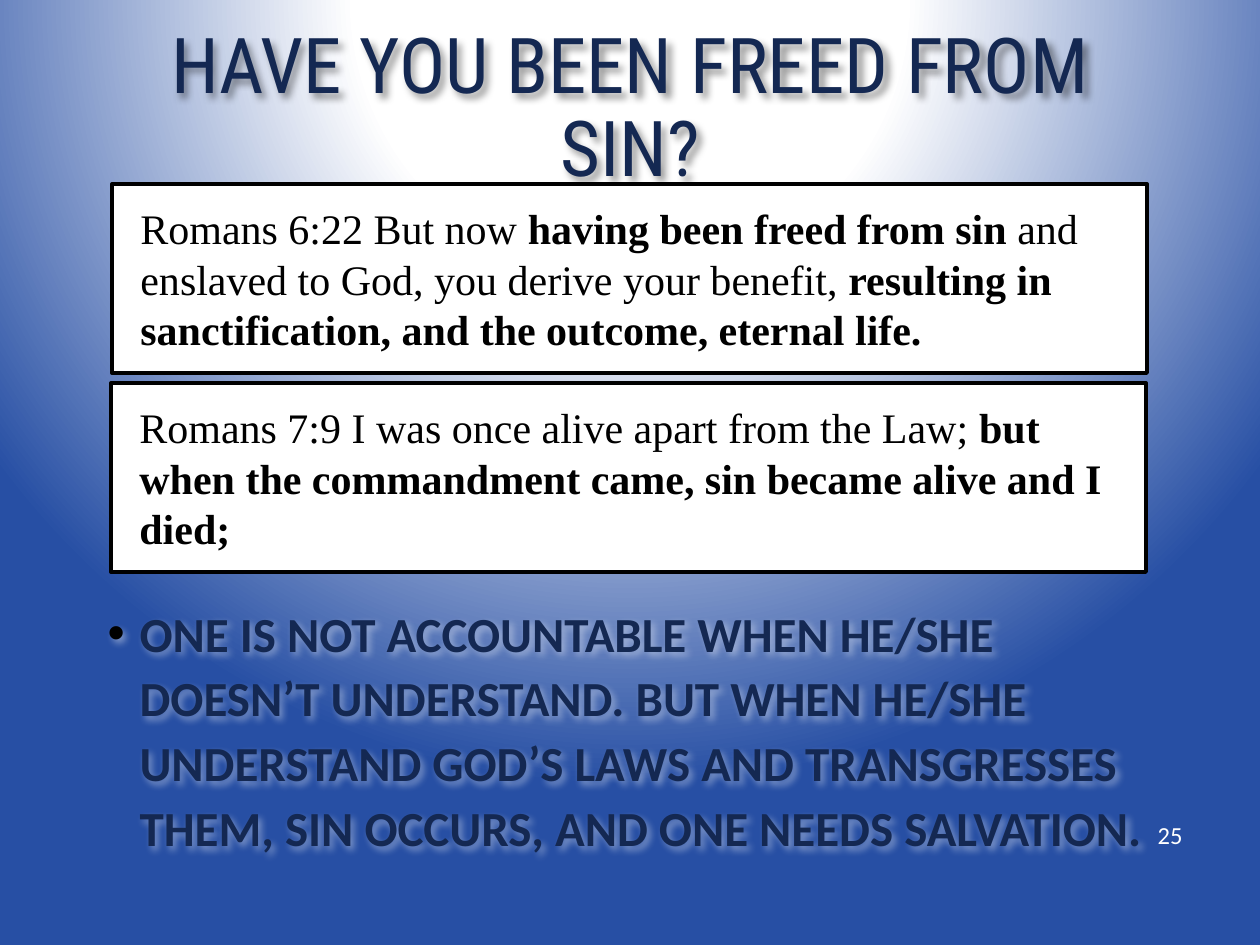
import pptx
import pptx.dml.color
import pptx.enum.shapes
import pptx.enum.text
import pptx.oxml
import pptx.oxml.ns
import pptx.util

PX = 914400 / 126
NAVY = pptx.dml.color.RGBColor(0x14, 0x28, 0x52)
BLUE = pptx.dml.color.RGBColor(0x27, 0x4F, 0xA4)
WHITE = pptx.dml.color.RGBColor(0xFF, 0xFF, 0xFF)
BLACK = pptx.dml.color.RGBColor(0, 0, 0)
ALIGN = pptx.enum.text.PP_ALIGN
ANCHOR = pptx.enum.text.MSO_ANCHOR
NS = pptx.oxml.ns.nsdecls("a")


def px(length):
    return pptx.util.Emu(round(length * PX))


def place(shape, box):
    shape.left, shape.top, shape.width, shape.height = map(px, box)


def set_text(shape, runs, *, font, size, color, align=ALIGN.LEFT,
             anchor=ANCHOR.TOP, line_spacing=1.0, margin=0, indent=0, bullet=None):
    """Fill one paragraph from (text, bold) pairs; margin and indent are in px."""
    frame = shape.text_frame
    frame.word_wrap = True
    frame.auto_size = pptx.enum.text.MSO_AUTO_SIZE.NONE
    frame.vertical_anchor = anchor
    paragraph = frame.paragraphs[0]
    paragraph.alignment = align
    paragraph.line_spacing = line_spacing
    paragraph.space_before = pptx.util.Pt(0)
    properties = paragraph._p.get_or_add_pPr()
    properties.set("marL", str(px(margin)))
    properties.set("indent", str(px(indent)))
    if bullet:
        for xml in (f'<a:buClr {NS}><a:srgbClr val="{BLACK}"/></a:buClr>',
                    f'<a:buFont {NS} typeface="Arial"/>',
                    f'<a:buChar {NS} char="{bullet}"/>'):
            properties.append(pptx.oxml.parse_xml(xml))
    for text, bold in runs:
        run = paragraph.add_run()
        run.text = text
        run.font.name = font
        run.font.size = pptx.util.Pt(size)
        run.font.bold = bold
        run.font.color.rgb = color


def add_text_shadow(shape, color, opacity):
    shape._element.spPr.append(pptx.oxml.parse_xml(
        f'<a:effectLst {NS}><a:outerShdw blurRad="50800" dist="38100" dir="2700000" '
        f'algn="tl" rotWithShape="0"><a:srgbClr val="{color}">'
        f'<a:alpha val="{opacity * 1000}"/></a:srgbClr></a:outerShdw></a:effectLst>'))


def paint_background(slide):
    """Radial gradient centred above the slide."""
    slide.background.fill.gradient()
    gradient = slide._element.find(".//" + pptx.oxml.ns.qn("a:gradFill"))
    stops = "".join(f'<a:gs pos="{position * 1000}"><a:srgbClr val="{color}"/></a:gs>'
                    for position, color in ((0, WHITE), (35, WHITE), (100, BLUE)))
    gradient.getparent().replace(gradient, pptx.oxml.parse_xml(
        f'<a:gradFill {NS} rotWithShape="1"><a:gsLst>{stops}</a:gsLst>'
        '<a:path path="circle"><a:fillToRect l="50000" t="-80000" r="50000" b="180000"/>'
        '</a:path></a:gradFill>'))


def fill_title(slide, box):
    title = slide.shapes.title
    place(title, box)
    set_text(title, [("HAVE YOU BEEN FREED FROM SIN?", False)], font="Roboto Condensed",
             size=44, color=NAVY, align=ALIGN.CENTER, anchor=ANCHOR.MIDDLE,
             line_spacing=0.9)
    outline = pptx.oxml.parse_xml(
        f'<a:ln {NS} w="9525"><a:solidFill><a:srgbClr val="{WHITE}"/></a:solidFill></a:ln>')
    title.text_frame.paragraphs[0].runs[0]._r.get_or_add_rPr().insert(0, outline)
    add_text_shadow(title, BLACK, 40)


def fill_body(slide, box):
    body = slide.placeholders[1]
    place(body, box)
    set_text(body, [("ONE IS NOT ACCOUNTABLE WHEN HE/SHE DOESN’T UNDERSTAND. BUT WHEN "
                     "HE/SHE UNDERSTAND GOD’S LAWS AND TRANSGRESSES THEM, SIN OCCURS, "
                     "AND ONE NEEDS SALVATION.", True)],
             font="Calibri", size=28, color=NAVY, line_spacing=1.1,
             margin=32, indent=-32, bullet="•")
    add_text_shadow(body, WHITE, 40)


def add_verse(slide, box, runs):
    verse = slide.shapes.add_shape(pptx.enum.shapes.MSO_SHAPE.RECTANGLE, *map(px, box))
    verse.shadow.inherit = False
    verse.fill.solid()
    verse.fill.fore_color.rgb = WHITE
    verse.line.color.rgb = BLACK
    verse.line.width = pptx.util.Pt(2.25)
    set_text(verse, runs, font="Times New Roman", size=24, color=BLACK,
             anchor=ANCHOR.MIDDLE, margin=16)


def add_page_number(slide, box):
    number = slide.shapes.add_textbox(*map(px, box))
    set_text(number, [("25", False)], font="Calibri", size=14, color=WHITE,
             align=ALIGN.RIGHT, anchor=ANCHOR.MIDDLE)


def main():
    presentation = pptx.Presentation()
    presentation.slide_width, presentation.slide_height = px(1260), px(945)
    slide = presentation.slides.add_slide(presentation.slide_layouts[1])
    paint_background(slide)
    fill_title(slide, (95, 0, 1071, 221))
    fill_body(slide, (95, 591, 1071, 287))
    add_verse(slide, (112, 184, 1035, 189), [
        ("Romans 6:22 But now ", False),
        ("having been freed from sin ", True),
        ("and enslaved to God, you derive your benefit, ", False),
        ("resulting in sanctification, and the outcome, eternal life.", True)])
    add_verse(slide, (111, 383, 1035, 189), [
        ("Romans 7:9 I was once alive apart from the Law; ", False),
        ("but when the commandment came, sin became alive and I died;", True)])
    add_page_number(slide, (1116, 810, 79, 50))
    presentation.save("out.pptx")


if __name__ == "__main__":
    main()
